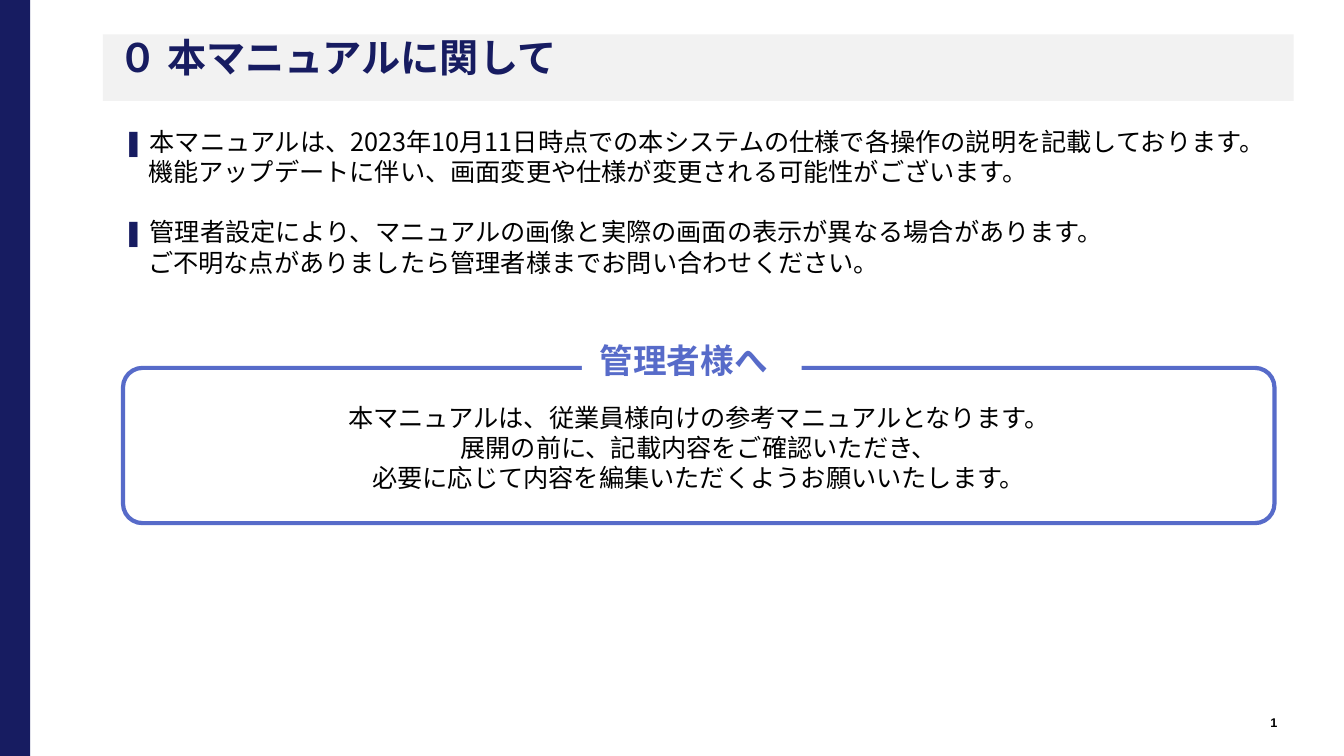
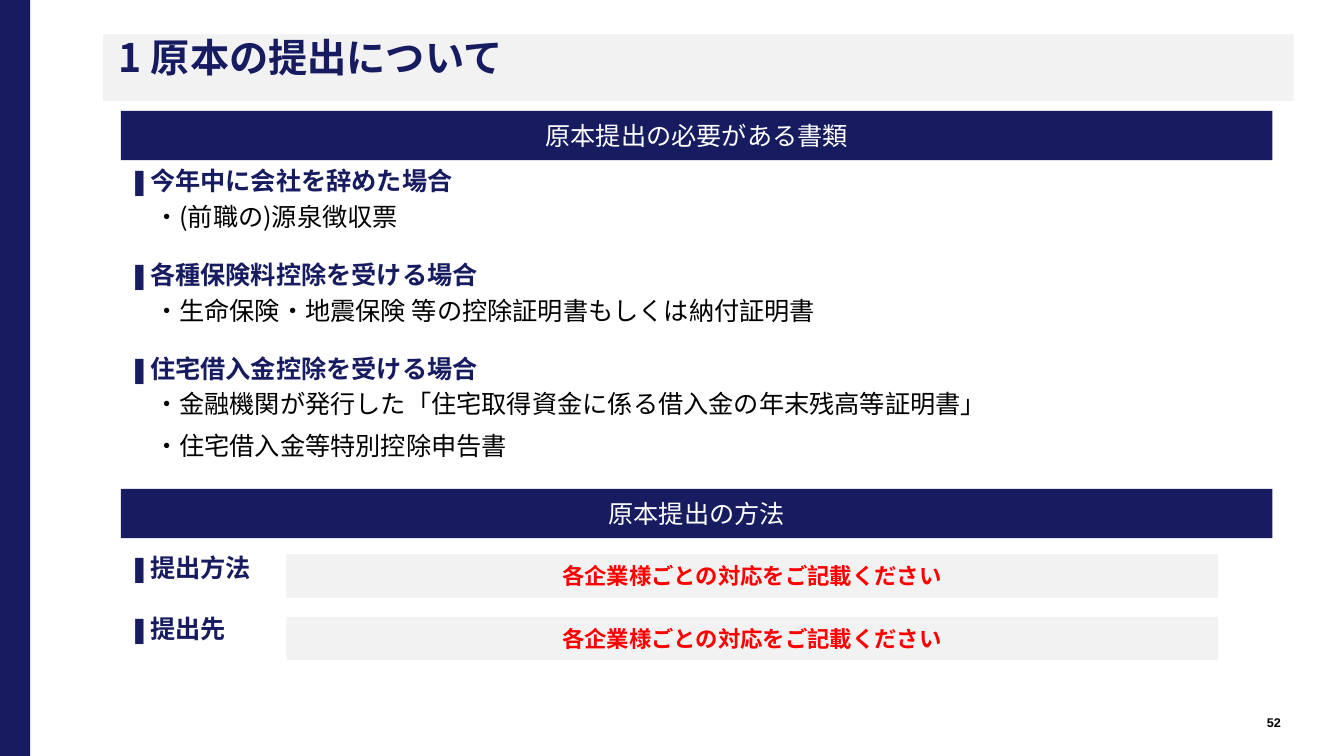
from typing import NamedTuple

from lxml import etree
from pptx import Presentation
from pptx.dml.color import RGBColor
from pptx.enum.shapes import MSO_SHAPE
from pptx.enum.text import MSO_ANCHOR, MSO_AUTO_SIZE, PP_ALIGN
from pptx.oxml.ns import qn
from pptx.util import Pt

PX = 9144  # 100 px to the inch


class Theme:
    navy, blue, gray = "171C61", "576BC9", "F2F2F2"
    black, white, red = "000000", "FFFFFF", "FF0000"
    sans, mark, page = "Noto Sans CJK JP", "Lato", "Arial"
    title, head, body, note, foot = 28, 24, 18, 16, 9
    tight, loose, snug = 19.5, 21.6, 27  # line pitches


class Line(NamedTuple):
    text: str
    bar: str = ""
    left: int = 0
    before: float = 0
    after: float = 0
    color: str = Theme.black
    bold: bool = False


def write(frame, lines, size, pitch=None, align=PP_ALIGN.LEFT, font=Theme.sans):
    """Fill a text frame with styled lines."""
    frame.word_wrap = True
    frame.auto_size = MSO_AUTO_SIZE.NONE
    for i, line in enumerate(lines):
        par = frame.paragraphs[0] if i == 0 else frame.add_paragraph()
        par.text = line.bar or line.text
        if line.bar:
            par.add_run().text = line.text
        par.alignment = align
        par.space_before, par.space_after = Pt(line.before), Pt(line.after)
        if pitch:
            par.line_spacing = Pt(pitch)
        props = par._p.get_or_add_pPr()
        props.set("marL", str(line.left * PX))
        props.set("indent", "0")
        for j, run in enumerate(par.runs):
            is_bar = bool(line.bar) and j == 0
            run.font.size = Pt(size)
            run.font.bold = line.bold and not is_bar
            run.font.name = Theme.mark if is_bar else font
            tone = Theme.navy if is_bar else line.color
            run.font.color.rgb = RGBColor.from_string(tone)
            east = etree.Element(qn("a:ea"), typeface=Theme.sans)
            run.font._element.find(qn("a:latin")).addnext(east)


def box(slide, place, fill=None, kind=MSO_SHAPE.RECTANGLE, edge=None):
    """Add a flat shape, or a text box when there is no fill."""
    place = [n * PX for n in place]
    if not fill:
        item = slide.shapes.add_textbox(*place)
        item.text_frame.margin_top = 7 * PX
        return item
    item = slide.shapes.add_shape(kind, *place)
    item.shadow.inherit = False
    item.fill.solid()
    item.fill.fore_color.rgb = RGBColor.from_string(fill)
    if edge:
        item.line.color.rgb = RGBColor.from_string(edge)
        item.line.width = Pt(3)
    else:
        item.line.fill.background()
    item.text_frame.vertical_anchor = MSO_ANCHOR.MIDDLE
    return item


deck = Presentation()
deck.slide_width, deck.slide_height = 1333 * PX, 750 * PX

# Shared frame: side band, title strip, page number
pages = []
for name, left, num in (
    ("０ 本マニュアルに関して", 6, "1"),
    ("1 原本の提出について", 6, "52"),
):
    slide = deck.slides.add_slide(deck.slide_layouts[5])
    box(slide, (0, 0, 30, 750), Theme.navy)
    title = slide.shapes.title
    title.left, title.top, title.width, title.height = (
        n * PX for n in (102, 34, 1181, 66))
    title.fill.solid()
    title.fill.fore_color.rgb = RGBColor.from_string(Theme.gray)
    frame = title.text_frame
    frame.vertical_anchor = MSO_ANCHOR.TOP
    frame.margin_top = 8 * PX
    write(frame, [Line(name, left=left, color=Theme.navy, bold=True)],
          Theme.title, Theme.snug)
    foot = slide.shapes.add_textbox(*(n * PX for n in (1224, 707, 79, 20)))
    foot.text_frame.vertical_anchor = MSO_ANCHOR.MIDDLE
    write(foot.text_frame, [Line(num, bold=True)], Theme.foot,
          align=PP_ALIGN.CENTER, font=Theme.page)
    pages.append(slide)
about, papers = pages

# About: notes
write(box(about, (112, 118, 1181, 200)).text_frame, [
    Line("本マニュアルは、2023年10月11日時点での本システムの仕様で"
         "各操作の説明を記載しております。", "❚ "),
    Line("機能アップデートに伴い、画面変更や仕様が変更される可能性がございます。", left=25),
    Line("管理者設定により、マニュアルの画像と実際の画面の表示が異なる場合があります。",
         "❚ ", before=Theme.loose),
    Line("ご不明な点がありましたら管理者様までお問い合わせください。", left=25),
], Theme.body, Theme.loose)

# About: framed message with its label
panel = box(about, (122, 365, 1142, 154), Theme.white,
            MSO_SHAPE.ROUNDED_RECTANGLE, Theme.blue)
panel.adjustments[0] = 0.125
panel.text_frame.margin_top = 9 * PX
write(panel.text_frame, [
    Line("本マニュアルは、従業員様向けの参考マニュアルとなります。"),
    Line("展開の前に、記載内容をご確認いただき、"),
    Line("必要に応じて内容を編集いただくようお願いいたします。"),
], Theme.body, Theme.loose, PP_ALIGN.CENTER)
label = box(about, (577, 329, 218, 56), Theme.white)
write(label.text_frame,
      [Line("管理者様へ", left=8, color=Theme.blue, bold=True)], Theme.head)

# Papers: section bands
for top, text in ((110, "原本提出の必要がある書類"), (485, "原本提出の方法")):
    band = box(papers, (120, top, 1142, 49), Theme.navy)
    write(band.text_frame, [Line(text, color=Theme.white)], Theme.body,
          align=PP_ALIGN.CENTER)

# Papers: cases and the documents each one needs
cases = (
    ("今年中に会社を辞めた場合", ["・(前職の)源泉徴収票"]),
    ("各種保険料控除を受ける場合",
     ["・生命保険・地震保険 等の控除証明書もしくは納付証明書"]),
    ("住宅借入金控除を受ける場合",
     ["・金融機関が発行した「住宅取得資金に係る借入金の年末残高等証明書」",
      "・住宅借入金等特別控除申告書"]),
)
lines = []
for case, docs in cases:
    lines.append(Line(case, "❚", 6, 22 if lines else 0,
                      color=Theme.navy, bold=True))
    for i, doc in enumerate(docs):
        lines.append(Line(doc, left=31, before=10 if i else 6))
write(box(papers, (112, 160, 1161, 317)).text_frame, lines,
      Theme.body, Theme.tight)

# Papers: how and where to submit
write(box(papers, (112, 544, 1161, 155)).text_frame, [
    Line(text, "❚", 6, gap, color=Theme.navy, bold=True)
    for text, gap in (("提出方法", 0), ("提出先", 24))
], Theme.body, Theme.tight)
for row in range(2):
    field = box(papers, (284, 550 + 62 * row, 924, 43), Theme.gray)
    write(field.text_frame,
          [Line("各企業様ごとの対応をご記載ください", color=Theme.red, bold=True)],
          Theme.note, align=PP_ALIGN.CENTER)

deck.save("out.pptx")
